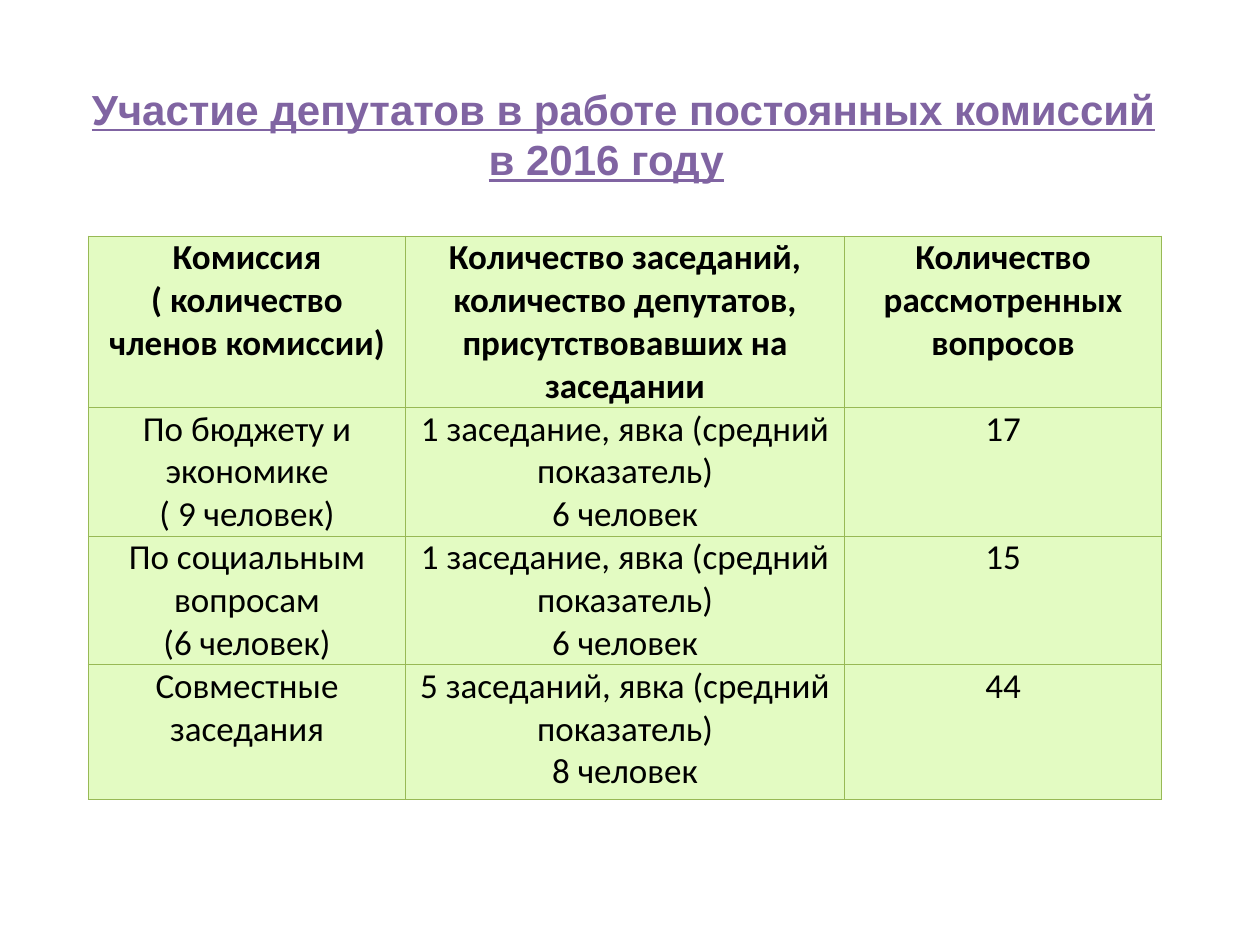
"""Builds a slide with a table on the work of standing commissions."""
from dataclasses import dataclass

from lxml.etree import SubElement as Sub
from pptx import Presentation
from pptx.dml.color import RGBColor
from pptx.enum.text import MSO_ANCHOR as Anchor, MSO_AUTO_SIZE as Fit, PP_ALIGN as Align
from pptx.oxml.ns import qn
from pptx.util import Cm, Pt

GREEN, LEAF, PLUM, BLACK = "E3FBC2", "98B955", "8064A2", "000000"
WIDTHS = (6.4, 8.84, 6.4)


@dataclass
class Row:
    height: float
    cells: tuple[str, str, str]
    bold: bool = False


ROWS = (
    Row(2.72, ("Комиссия\n( количество членов комиссии)",
               "Количество заседаний, количество депутатов,\nприсутствовавших на заседании",
               "Количество рассмотренных вопросов"), True),
    Row(2.03, ("По бюджету и экономике\n( 9 человек)",
               "1 заседание, явка (средний показатель)\n6 человек", "17")),
    Row(2.03, ("По социальным вопросам\n(6 человек)",
               "1 заседание, явка (средний показатель)\n6 человек", "15")),
    Row(2.72, ("Совместные заседания",
               "5 заседаний, явка (средний показатель)\n8 человек", "44")),
)


def color(code: str) -> RGBColor:
    return RGBColor.from_string(code)


def set_font(font, name: str, size: int, code: str, bold: bool) -> None:
    font.name, font.size, font.bold = name, Pt(size), bold
    font.color.rgb = color(code)


def draw_title(slide) -> None:
    title = slide.shapes.title
    title.left, title.top, title.width, title.height = Cm(1.6), Cm(1.4), Cm(22.2), Cm(2.6)
    frame = title.text_frame
    frame.text = "Участие депутатов в работе постоянных комиссий\nв 2016 году"
    frame.word_wrap, frame.auto_size = True, Fit.NONE
    frame.vertical_anchor = Anchor.MIDDLE
    frame.margin_left = Cm(0.25)
    frame.margin_right = 0
    for par, indent in zip(frame.paragraphs, (0, 8)):
        par.alignment = Align.LEFT
        par._p.get_or_add_pPr().set("marL", str(Cm(indent)))
        set_font(par.font, "Arial", 24, PLUM, True)
        par.font.underline = True


def draw_cell(cell, text: str, bold: bool) -> None:
    cell.text = text
    cell.margin_left = cell.margin_right = Cm(0.18)
    cell.margin_top = cell.margin_bottom = 0
    for par in cell.text_frame.paragraphs:
        par.alignment = Align.CENTER
        set_font(par.font, "Calibri", 20, BLACK, bold)
    props = cell._tc.get_or_add_tcPr()
    for side in "LRTB":
        line = Sub(props, qn(f"a:ln{side}"), w=str(Pt(0.75)))
        Sub(Sub(line, qn("a:solidFill")), qn("a:srgbClr"), val=LEAF)
    cell.fill.solid()
    cell.fill.fore_color.rgb = color(GREEN)


def draw_table(slide) -> None:
    frame = slide.shapes.add_table(len(ROWS), len(WIDTHS), Cm(1.78), Cm(4.76),
                                   Cm(sum(WIDTHS)), Cm(11.18))
    table = frame.table
    table.first_row = table.horz_banding = False
    for col, width in zip(table.columns, WIDTHS):
        col.width = Cm(width)
    for line, row in zip(table.rows, ROWS):
        line.height = Cm(row.height)
        for cell, text in zip(line.cells, row.cells):
            draw_cell(cell, text, row.bold)
    frame.height = Cm(11.18)


def main() -> None:
    deck = Presentation()
    deck.slide_width, deck.slide_height = Cm(25.4), Cm(19.05)
    slide = deck.slides.add_slide(deck.slide_layouts[5])
    draw_title(slide)
    draw_table(slide)
    deck.save("out.pptx")


if __name__ == "__main__":
    main()
